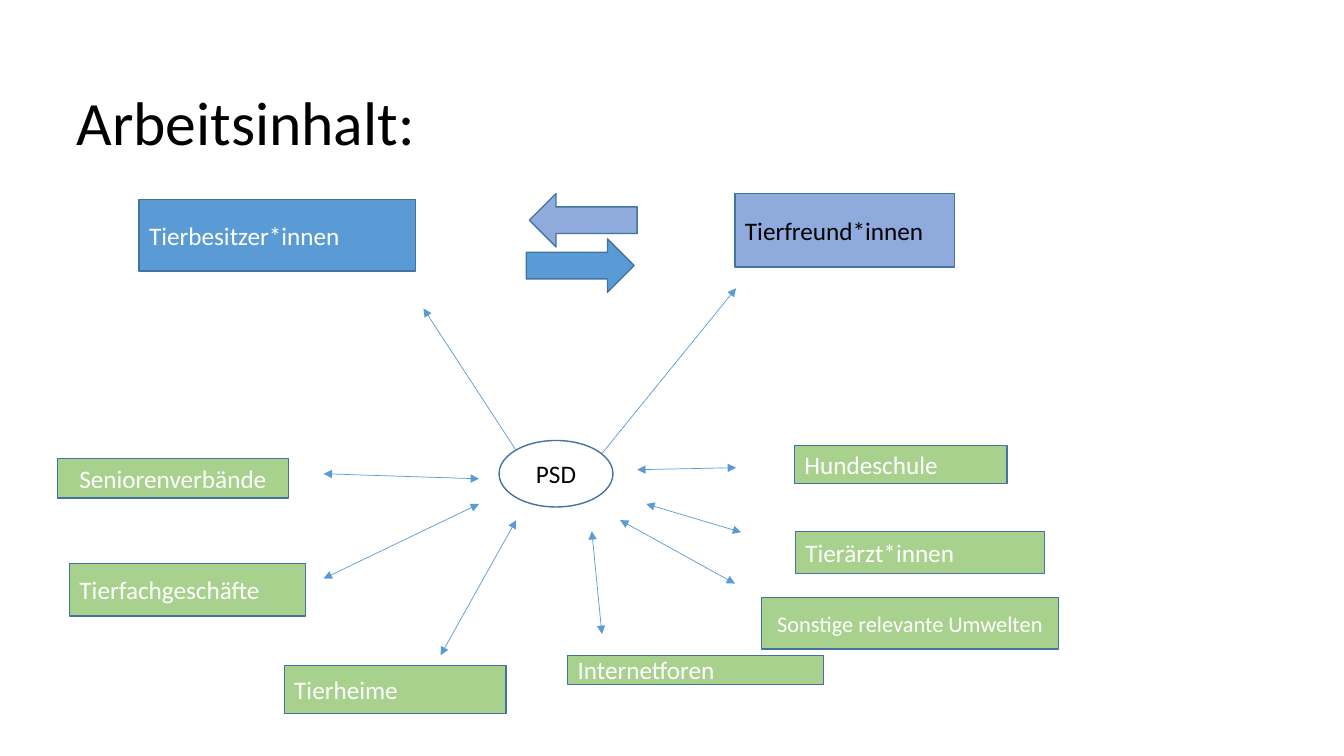
from lxml.etree import SubElement
from pptx import Presentation
from pptx.dml.color import RGBColor
from pptx.enum.shapes import MSO_CONNECTOR, MSO_SHAPE as Shape
from pptx.enum.text import MSO_ANCHOR, PP_ALIGN as Align
from pptx.oxml.ns import qn
from pptx.util import Inches, Pt

WHITE = RGBColor(0xFF, 0xFF, 0xFF)
BLACK = RGBColor(0, 0, 0)
BLUE = RGBColor(0x5B, 0x9B, 0xD5)
LAVENDER = RGBColor(0x8F, 0xAA, 0xDC)
GREEN = RGBColor(0xA9, 0xD1, 0x8E)
OUTLINE = RGBColor(0x43, 0x73, 0x9E)
FONT = "Calibri"

# All places are in inches: left, top, width, height.
TITLE = ("Arbeitsinhalt:", (0.66, 0.53, 9.4, 1.44))

# text, place, shape, fill, font colour, alignment, size
MAIN_PARTIES = [
    ("PSD", (4.95, 4.37, 1.13, 0.66), Shape.OVAL, WHITE, BLACK, Align.CENTER, 18),
    ("Tierfreund*innen", (7.29, 1.92, 2.18, 0.73), Shape.RECTANGLE, LAVENDER, BLACK, Align.LEFT, 18),
    ("Tierbesitzer*innen", (1.38, 1.98, 2.74, 0.71), Shape.RECTANGLE, BLUE, WHITE, Align.LEFT, 18),
]

# text, place, alignment, size
ENVIRONMENTS = [
    ("Hundeschule", (7.88, 4.42, 2.11, 0.38), Align.LEFT, 18),
    ("Tierärzt*innen", (7.89, 5.27, 2.47, 0.42), Align.LEFT, 18),
    ("Internetforen", (5.63, 6.5, 2.54, 0.29), Align.LEFT, 18),
    ("Tierheime", (2.82, 6.6, 2.2, 0.48), Align.LEFT, 18),
    ("Tierfachgeschäfte", (0.69, 5.59, 2.34, 0.52), Align.LEFT, 18),
    ("Seniorenverbände", (0.57, 4.55, 2.29, 0.39), Align.CENTER, 18),
    ("Sonstige relevante Umwelten", (7.55, 5.93, 2.95, 0.51), Align.CENTER, 16),
]

EXCHANGE_ARROWS = [
    (Shape.RIGHT_ARROW, (5.22, 2.37, 1.07, 0.53), BLUE),
    (Shape.LEFT_ARROW, (5.25, 1.92, 1.07, 0.53), LAVENDER),
]

# start, end
ONE_WAY_LINKS = [
    ((5.97, 4.5), (7.3, 2.86)),
    ((5.12, 4.47), (4.2, 3.06)),
]
TWO_WAY_LINKS = [
    ((7.3, 4.64), (6.32, 4.66)),
    ((7.35, 5.28), (6.41, 5)),
    ((7.29, 5.79), (6.15, 5.16)),
    ((5.97, 6.29), (5.87, 5.27)),
    ((4.37, 6.5), (5.12, 5.16)),
    ((3.21, 5.74), (4.75, 5)),
    ((4.75, 4.75), (3.21, 4.7)),
]


def inches(lengths):
    return [Inches(length) for length in lengths]


def write(box, text, size, color, align):
    frame = box.text_frame
    frame.word_wrap = True
    frame.vertical_anchor = MSO_ANCHOR.MIDDLE
    frame.text = text
    para = frame.paragraphs[0]
    para.alignment = align
    font = para.runs[0].font
    font.name, font.size = FONT, Pt(size)
    font.color.rgb = color


def add_title(slide):
    text, place = TITLE
    box = slide.shapes.add_textbox(*inches(place))
    write(box, text, 44, BLACK, Align.LEFT)
    box.text_frame.paragraphs[0].line_spacing = 0.9


def add_figure(slide, kind, place, fill):
    figure = slide.shapes.add_shape(kind, *inches(place))
    figure.shadow.inherit = False
    figure.fill.solid()
    figure.fill.fore_color.rgb = fill
    figure.line.color.rgb = OUTLINE
    figure.line.width = Pt(1)
    return figure


def add_link(slide, start, end, arrowheads):
    """Draw a thin line; arrowheads names its ends, headEnd before tailEnd."""
    link = slide.shapes.add_connector(MSO_CONNECTOR.STRAIGHT, *inches(start + end))
    link.line.color.rgb = BLUE
    link.line.width = Pt(0.5)
    outline = link.line._get_or_add_ln()
    for arrowhead in arrowheads:
        SubElement(outline, qn(f"a:{arrowhead}"), type="triangle")
    SubElement(link._element.spPr, qn("a:effectLst"))


def main():
    deck = Presentation()
    deck.slide_width, deck.slide_height = inches((13.33, 7.5))
    slide = deck.slides.add_slide(deck.slide_layouts[6])

    add_title(slide)
    for text, place, kind, fill, color, align, size in MAIN_PARTIES:
        write(add_figure(slide, kind, place, fill), text, size, color, align)
    for text, place, align, size in ENVIRONMENTS:
        box = add_figure(slide, Shape.RECTANGLE, place, GREEN)
        write(box, text, size, WHITE, align)
    for kind, place, fill in EXCHANGE_ARROWS:
        add_figure(slide, kind, place, fill)
    for start, end in ONE_WAY_LINKS:
        add_link(slide, start, end, ["tailEnd"])
    for start, end in TWO_WAY_LINKS:
        add_link(slide, start, end, ["headEnd", "tailEnd"])

    deck.save("out.pptx")


if __name__ == "__main__":
    main()
